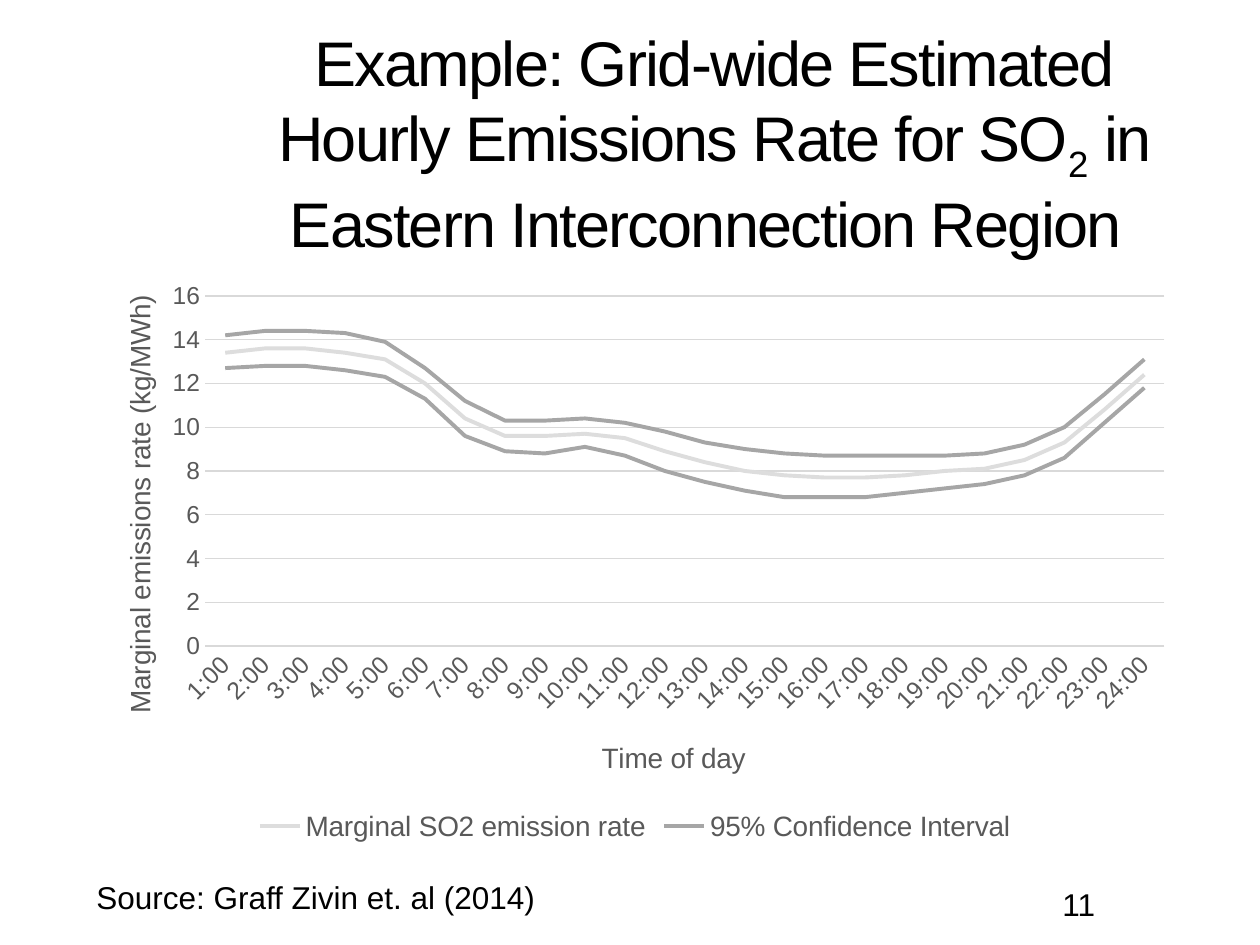
from lxml import etree
from pptx import Presentation
from pptx import util as u
from pptx.chart.data import CategoryChartData
from pptx.dml.color import RGBColor
from pptx.enum import chart as charts, text
from pptx.oxml.ns import qn

CENTRAL = [13.4, 13.6, 13.6, 13.4, 13.1, 12, 10.4, 9.6, 9.6, 9.7, 9.5, 8.9,
           8.4, 8, 7.8, 7.7, 7.7, 7.8, 8, 8.1, 8.5, 9.3, 10.8, 12.4]
LOWER = [12.7, 12.8, 12.8, 12.6, 12.3, 11.3, 9.6, 8.9, 8.8, 9.1, 8.7, 8,
         7.5, 7.1, 6.8, 6.8, 6.8, 7, 7.2, 7.4, 7.8, 8.6, 10.2, 11.8]
UPPER = [14.2, 14.4, 14.4, 14.3, 13.9, 12.7, 11.2, 10.3, 10.3, 10.4, 10.2, 9.8,
         9.3, 9, 8.8, 8.7, 8.7, 8.7, 8.7, 8.8, 9.2, 10, 11.5, 13.1]
SERIES = [("Marginal SO2 emission rate", CENTRAL, "DDDDDD"),
          ("Series 2", LOWER, "A6A6A6"),
          ("95% Confidence Interval", UPPER, "A6A6A6")]
HOURS = [f"{hour}:00" for hour in range(1, 25)]


def color(value):
    return RGBColor.from_string(value)


def style_font(font, size, fill):
    font.name = "Arial"
    font.size = u.Pt(size)
    font.bold = False
    font.color.rgb = color(fill)


def add_run(paragraph, content, size=18, fill="000000", spacing=0, baseline=0):
    run = paragraph.add_run()
    run.text = content
    style_font(run.font, size, fill)
    properties = run.font._element
    if spacing:
        properties.set("spc", str(spacing * 100))
    if baseline:
        properties.set("baseline", str(baseline * 1000))


def place(parent, index, **fractions):
    layout = parent.find(qn("c:layout"))
    if layout is None:
        layout = etree.Element(qn("c:layout"))
        parent.insert(index, layout)
    manual = etree.SubElement(layout, qn("c:manualLayout"))
    if "w" in fractions:
        etree.SubElement(manual, qn("c:layoutTarget"), val="inner")
    for side in "xy":
        etree.SubElement(manual, qn(f"c:{side}Mode"), val="edge")
    for name, value in fractions.items():
        etree.SubElement(manual, qn(f"c:{name}"), val=str(value))


class SlideBuilder:
    ink = "000000"
    gray = "595959"
    rule = "D9D9D9"

    def __init__(self, presentation):
        self.slide = presentation.slides.add_slide(presentation.slide_layouts[6])

    def text_box(self, left, top, width, height, runs, wrap=True,
                 align=text.PP_ALIGN.LEFT, anchor=text.MSO_ANCHOR.TOP):
        shape = self.slide.shapes.add_textbox(
            u.Pt(left), u.Pt(top), u.Pt(width), u.Pt(height))
        frame = shape.text_frame
        frame.word_wrap = wrap
        frame.vertical_anchor = anchor
        paragraph = frame.paragraphs[0]
        paragraph.alignment = align
        for content, options in runs:
            add_run(paragraph, content, fill=self.ink, **options)

    def axis(self, axis, title, x, y):
        axis.major_tick_mark = axis.minor_tick_mark = charts.XL_TICK_MARK.NONE
        style_font(axis.tick_labels.font, 14, self.gray)
        add_run(axis.axis_title.text_frame.paragraphs[0], title, 16, self.gray)
        place(axis.axis_title._element, 1, x=x, y=y)

    def thin_line(self, line):
        line.color.rgb = color(self.rule)
        line.width = u.Pt(0.75)

    def line_chart(self, left, top, width, height):
        data = CategoryChartData()
        data.categories = HOURS
        for name, values, _ in SERIES:
            data.add_series(name, values)
        chart = self.slide.shapes.add_chart(
            charts.XL_CHART_TYPE.LINE, u.Pt(left), u.Pt(top),
            u.Pt(width), u.Pt(height), data).chart
        chart.has_title = False
        style_font(chart.font, 10, self.ink)
        chart.plots[0].vary_by_categories = False
        for series, (_, _, stroke) in zip(chart.plots[0].series, SERIES):
            series.smooth = False
            series.marker.style = charts.XL_MARKER_STYLE.NONE
            series.format.line.color.rgb = color(stroke)
            series.format.line.width = u.Pt(2.25)

        hours, rate = chart.category_axis, chart.value_axis
        self.axis(hours, "Time of day", 0.465, 0.805)
        self.axis(rate, "Marginal emissions rate (kg/MWh)", 0.03, 0.03)
        self.thin_line(hours.format.line)
        hours._element.find(qn("c:txPr")).find(qn("a:bodyPr")).set("rot", "-2700000")
        rate.minimum_scale, rate.maximum_scale, rate.major_unit = 0, 16, 2
        rate.format.line.fill.background()
        self.thin_line(rate.major_gridlines.format.line)
        plot_area = chart._chartSpace.chart.plotArea
        place(plot_area, 0, x=0.11, y=0.04, w=0.87, h=0.61)

        chart.has_legend = True
        legend = chart.legend
        legend.position = charts.XL_LEGEND_POSITION.BOTTOM
        legend.include_in_layout = False
        style_font(legend.font, 16, self.gray)
        entry = etree.Element(qn("c:legendEntry"))
        etree.SubElement(entry, qn("c:idx"), val="1")
        etree.SubElement(entry, qn("c:delete"), val="1")
        legend._element.insert(1, entry)


def main():
    presentation = Presentation()
    presentation.slide_width = u.Pt(720)
    presentation.slide_height = u.Pt(540)
    builder = SlideBuilder(presentation)
    heading = {"size": 36, "spacing": -1}
    builder.text_box(120, 42, 576, 78, [
        ("Example: Grid-wide Estimated Hourly Emissions Rate for SO", heading),
        ("2", {**heading, "baseline": -25}),
        (" in Eastern Interconnection Region ", heading),
    ], align=text.PP_ALIGN.CENTER, anchor=text.MSO_ANCHOR.MIDDLE)
    builder.text_box(600, 502, 84, 26, [("11", {})])
    builder.text_box(48, 498, 268, 29,
                     [("Source: Graff Zivin et. al (2014)", {})], wrap=False)
    builder.line_chart(48, 156, 630, 328)
    presentation.save("out.pptx")


if __name__ == "__main__":
    main()
